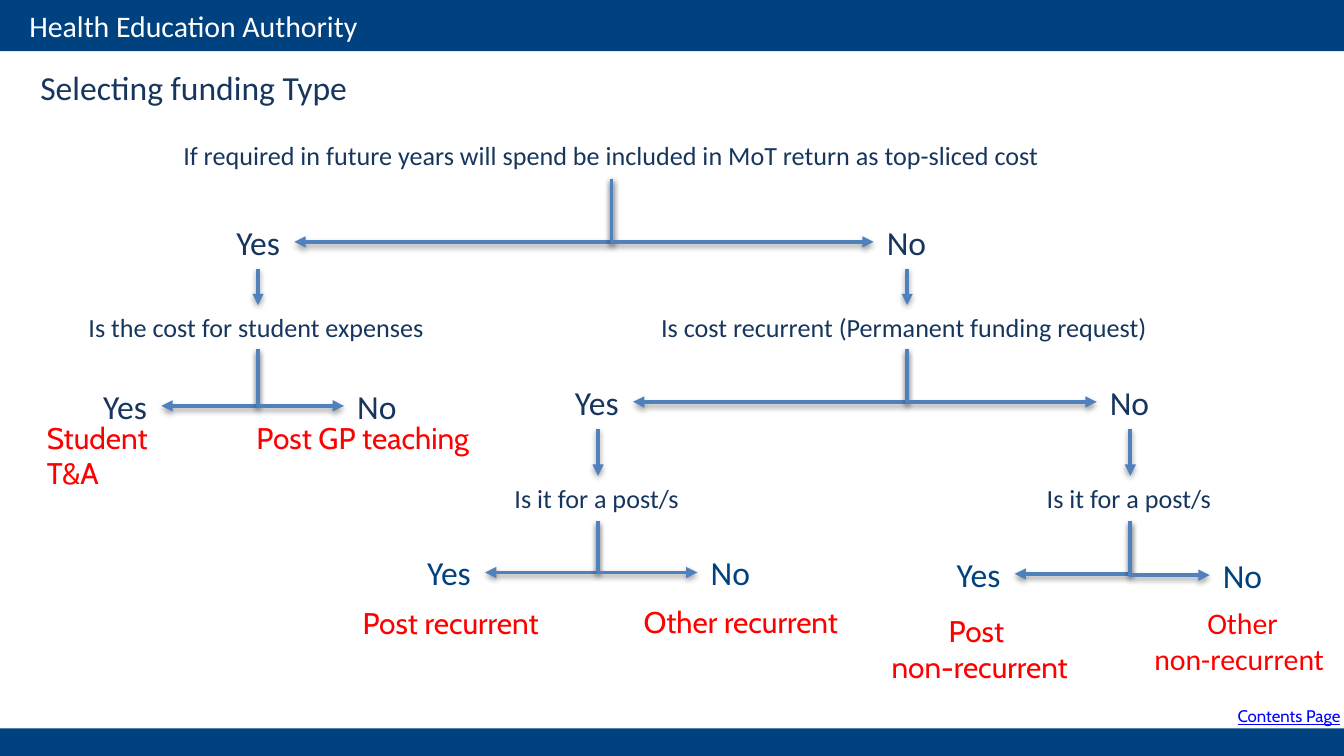
import pptx
import pptx.util
import pptx.dml.color
import pptx.enum.shapes
import pptx.enum.text
import pptx.oxml.ns
import lxml.etree

Inches = pptx.util.Inches
hex_color = pptx.dml.color.RGBColor.from_string
MSO_CONNECTOR = pptx.enum.shapes.MSO_CONNECTOR
PP_ALIGN = pptx.enum.text.PP_ALIGN
qn = pptx.oxml.ns.qn

NAVY, BLUE, RED, ARROW = "17365E", "004280", "FF0000", "4F81BD"


def write_text(sp, box, text, size, color, font="Calibri", align=PP_ALIGN.LEFT, wrap=False):
    sp.left, sp.top, sp.width, sp.height = [Inches(v) for v in box]
    tf = sp.text_frame
    tf.text = text
    tf.word_wrap = wrap
    tf.auto_size = pptx.enum.text.MSO_AUTO_SIZE.SHAPE_TO_FIT_TEXT
    tf.vertical_anchor = pptx.enum.text.MSO_ANCHOR.TOP
    for p in tf.paragraphs:
        p.alignment = align
        for r in p.runs:
            r.font.size = pptx.util.Pt(size)
            r.font.name = font
            r.font.color.rgb = hex_color(color)


def add_arrow(x1, y1, x2, y2):
    if x1 == x2:
        c = s.shapes.add_connector(MSO_CONNECTOR.STRAIGHT, Inches(x1), Inches(y1), Inches(x2), Inches(y2))
    else:
        mx, my = (x1 + x2) / 2, (y1 + y2) / 2
        half_w, half_h = (y2 - y1) / 2, abs(x2 - x1) / 2
        side = 1 if x2 < x1 else -1
        c = s.shapes.add_connector(
            MSO_CONNECTOR.ELBOW,
            Inches(mx - side * half_w), Inches(my - half_h),
            Inches(mx + side * half_w), Inches(my + half_h))
        spPr = c._element.spPr
        spPr.find(qn("a:xfrm")).set("rot", "5400000" if side == 1 else "16200000")
        spPr.find(qn("a:prstGeom")).set("prst", "bentConnector2")
    c.line.color.rgb = hex_color(ARROW)
    c.line.width = pptx.util.Pt(2)
    ln = c._element.spPr.find(qn("a:ln"))
    lxml.etree.SubElement(ln, qn("a:tailEnd"), type="triangle")


prs = pptx.Presentation()
prs.slide_width = Inches(10)
prs.slide_height = Inches(10) * 9 // 16
s = prs.slides.add_slide(prs.slide_layouts[5])

for top, height in [(5.42, 0.21), (0, 0.38)]:
    sp = s.shapes.add_shape(
        pptx.enum.shapes.MSO_SHAPE.RECTANGLE, 0, Inches(top), Inches(10), Inches(height))
    sp.shadow.inherit = False
    sp.fill.solid()
    sp.fill.fore_color.rgb = hex_color(BLUE)
    sp.line.fill.background()

header = s.shapes.add_textbox(0, 0, 0, 0)
write_text(header, (0.12, 0.01, 4.25, 0.37), "Health Education Authority", 16, "FFFFFF", wrap=True)
write_text(s.shapes.title, (0.2, 0.45, 2.52, 0.4), "Selecting funding Type", 18, NAVY)

questions = [
    (0.3, 0.99, 8.5, "If required in future years will spend be included in MoT return as top-sliced cost", PP_ALIGN.CENTER),
    (0.56, 2.27, 2.72, "Is the cost for student expenses", PP_ALIGN.LEFT),
    (4.82, 2.27, 3.85, "Is cost recurrent (Permanent funding request)", PP_ALIGN.LEFT),
    (3.73, 3.54, 1.43, "Is it for a post/s", PP_ALIGN.LEFT),
    (7.69, 3.54, 1.43, "Is it for a post/s", PP_ALIGN.LEFT),
]
for x, y, w, text, align in questions:
    sp = s.shapes.add_textbox(0, 0, 0, 0)
    write_text(sp, (x, y, w, 0.34), text, 14, NAVY, align=align)

branches = [
    (4.55, 1.33, 2.19, 1.8, 6.5, 1.8, NAVY),
    (1.92, 2.6, 1.2, 3.02, 2.56, 3.02, NAVY),
    (6.75, 2.6, 4.71, 2.99, 8.16, 2.99, NAVY),
    (4.45, 3.88, 3.61, 4.26, 5.19, 4.26, BLUE),
    (8.41, 3.88, 7.55, 4.27, 9, 4.28, BLUE),
]
for x, y, yes_x, yes_y, no_x, no_y, color in branches:
    add_arrow(x, y, yes_x, yes_y)
    add_arrow(x, y, no_x, no_y)
    yes = s.shapes.add_textbox(0, 0, 0, 0)
    write_text(yes, (yes_x - 0.53, yes_y - 0.2, 0.53, 0.4), "Yes", 18, color)
    no = s.shapes.add_textbox(0, 0, 0, 0)
    write_text(no, (no_x, no_y - 0.2, 0.5, 0.4), "No", 18, color)

for x, top, bottom in [(1.92, 2, 2.27), (6.75, 2, 2.27), (4.45, 3.19, 3.54), (8.41, 3.19, 3.54)]:
    add_arrow(x, top, x, bottom)

outcomes = [
    ((0.25, 3.07, 1.3, 0.64), "Student T&A", "Cabin", PP_ALIGN.LEFT, True),
    ((1.81, 3.07, 1.79, 0.37), "Post GP teaching", "Cabin", PP_ALIGN.LEFT, False),
    ((2.6, 4.45, 1.54, 0.37), "Post recurrent", "Cabin", PP_ALIGN.LEFT, False),
    ((4.69, 4.44, 1.66, 0.37), "Other recurrent", "Cabin", PP_ALIGN.LEFT, False),
    ((6.45, 4.51, 1.68, 0.64), "Post \nnon-recurrent", "Cabin", PP_ALIGN.CENTER, True),
    ((8.47, 4.45, 1.55, 0.64), "Other\nnon-recurrent ", "Calibri", PP_ALIGN.CENTER, True),
]
for box, text, font, align, wrap in outcomes:
    sp = s.shapes.add_textbox(0, 0, 0, 0)
    write_text(sp, box, text, 16, RED, font, align, wrap)

contents = s.shapes.add_textbox(0, 0, 0, 0)
write_text(contents, (9.11, 5.2, 1.06, 0.25), "Contents Page", 9, "0000FF", "Cabin", wrap=True)
contents.text_frame.paragraphs[0].runs[0].font.underline = True

prs.save("out.pptx")
